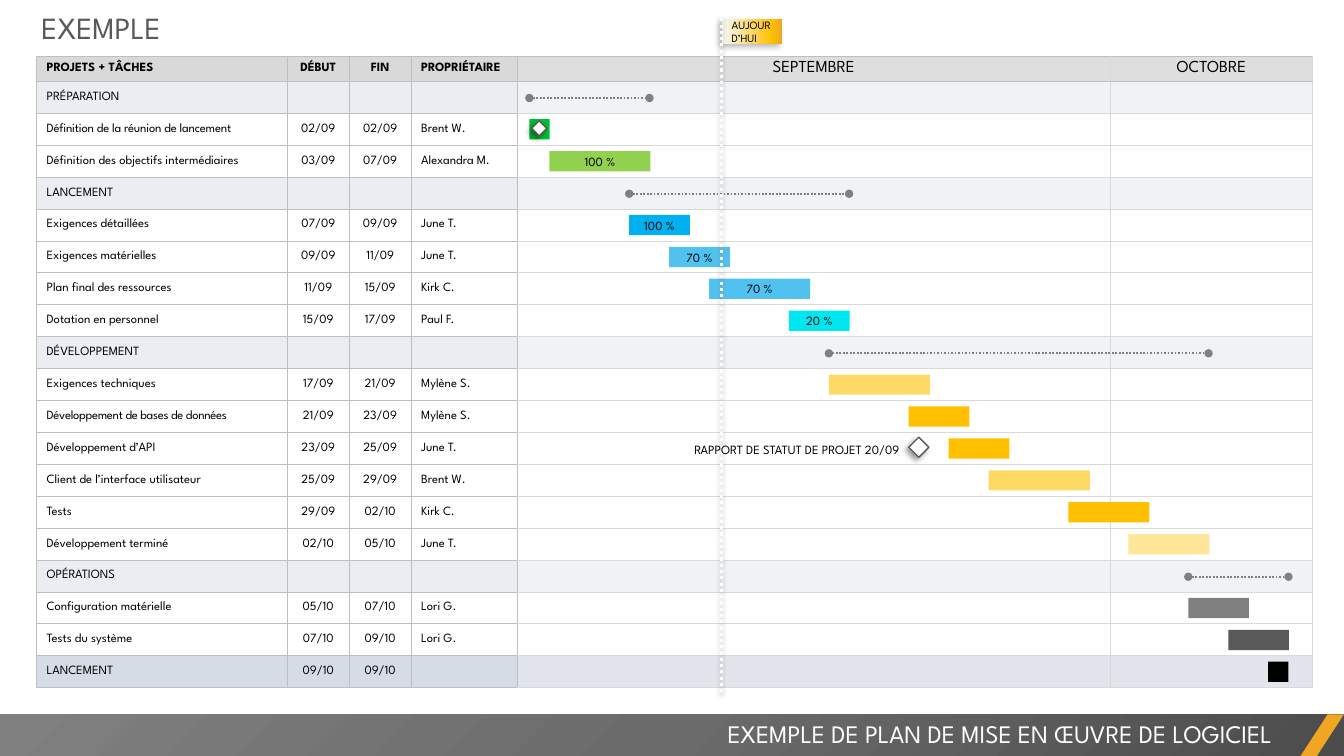
from lxml.etree import SubElement
from pptx import Presentation
from pptx.dml.color import RGBColor
from pptx.enum.dml import MSO_LINE
from pptx.enum.shapes import MSO_CONNECTOR, MSO_SHAPE
from pptx.enum.text import MSO_ANCHOR, PP_ALIGN
from pptx.oxml.ns import qn
from pptx.util import Cm, Pt

FONT = "League Spartan"
TABLE_LEFT, TABLE_TOP = 0.92, 1.42
COLUMNS = [6.32, 1.56, 1.56, 2.67, 14.95, 5.1]
HEADER_HEIGHT = 0.63
ROW_HEIGHT = 15.28 / 19
FIRST_DAY_LEFT = 13.34
DAY_STEP = 18.62 / 37
DAY_WIDTH = 0.51
TODAY = 18.19

HEADINGS = ["PROJETS + TÂCHES", "DÉBUT", "FIN", "PROPRIÉTAIRE", "SEPTEMBRE", "OCTOBRE"]
PHASES = [
    ("PRÉPARATION", "02/09", "07/09", [
        ("Définition de la réunion de lancement", "02/09", "02/09", "Brent W.", "00BD32", ""),
        ("Définition des objectifs intermédiaires", "03/09", "07/09", "Alexandra M.", "92D050", "100 %"),
    ]),
    ("LANCEMENT", "07/09", "17/09", [
        ("Exigences détaillées", "07/09", "09/09", "June T.", "00B0F0", "100 %"),
        ("Exigences matérielles", "09/09", "11/09", "June T.", "51C2F0", "70 %"),
        ("Plan final des ressources", "11/09", "15/09", "Kirk C.", "51C2F0", "70 %"),
        ("Dotation en personnel", "15/09", "17/09", "Paul F.", "00E7F2", "20 %"),
    ]),
    ("DÉVELOPPEMENT", "17/09", "05/10", [
        ("Exigences techniques", "17/09", "21/09", "Mylène S.", "FFD966", ""),
        ("Développement de bases de données", "21/09", "23/09", "Mylène S.", "FFC000", ""),
        ("Développement d’API", "23/09", "25/09", "June T.", "FFC000", ""),
        ("Client de l’interface utilisateur", "25/09", "29/09", "Brent W.", "FFD966", ""),
        ("Tests", "29/09", "02/10", "Kirk C.", "FFC000", ""),
        ("Développement terminé", "02/10", "05/10", "June T.", "FFE699", ""),
    ]),
    ("OPÉRATIONS", "05/10", "09/10", [
        ("Configuration matérielle", "05/10", "07/10", "Lori G.", "808080", ""),
        ("Tests du système", "07/10", "09/10", "Lori G.", "595959", ""),
        ("LANCEMENT", "09/10", "09/10", "", "000000", ""),
    ]),
]
LETTER_SPACING = {"Définition de la réunion de lancement": "-10",
                  "Développement de bases de données": "-20"}


def colour(code):
    return RGBColor.from_string(code)


def day_number(date):
    day, month = map(int, date.split("/"))
    return day + 30 * (month - 9)


def day_left(date):
    return FIRST_DAY_LEFT + DAY_STEP * (day_number(date) - 2)


def row_top(row):
    return TABLE_TOP + HEADER_HEIGHT + ROW_HEIGHT * (row - 1)


def write(frame, words, size=9, code="000000", align=PP_ALIGN.LEFT,
          anchor=MSO_ANCHOR.MIDDLE, bold=False):
    frame.word_wrap = True
    frame.vertical_anchor = anchor
    paragraph = frame.paragraphs[0]
    paragraph.alignment = align
    run = paragraph.add_run()
    run.text = words
    run.font.name = FONT
    run.font.size = Pt(size)
    run.font.bold = bold
    run.font.color.rgb = colour(code)
    return run


def add_shadow(properties, code, alpha, blur, distance):
    effects = properties.find(qn("a:effectLst"))
    shadow = SubElement(effects, qn("a:outerShdw"), blurRad=str(Pt(blur)),
                        dist=str(Pt(distance)), dir="8100000", rotWithShape="0")
    tint = SubElement(shadow, qn("a:srgbClr"), val=code)
    SubElement(tint, qn("a:alpha"), val=str(alpha * 1000))


def add_block(shapes, kind, left, top, width, height, fill=None):
    block = shapes.add_shape(kind, Cm(left), Cm(top), Cm(width), Cm(height))
    block.shadow.inherit = False
    block.line.fill.background()
    if fill:
        block.fill.solid()
        block.fill.fore_color.rgb = colour(fill)
    return block


def add_gradient(block, stops):
    properties = block.fill._xPr
    gradient = SubElement(properties, qn("a:gradFill"), rotWithShape="1")
    properties.find(qn("a:prstGeom")).addnext(gradient)
    stop_list = SubElement(gradient, qn("a:gsLst"))
    for position, code in stops:
        stop = SubElement(stop_list, qn("a:gs"), pos=str(position * 1000))
        SubElement(stop, qn("a:srgbClr"), val=code)
    return gradient


def add_dotted_line(shapes, start, end, code, width):
    line = shapes.add_connector(MSO_CONNECTOR.STRAIGHT, *map(Cm, start + end))
    line.line.color.rgb = colour(code)
    line.line.width = Pt(width)
    line.line.dash_style = MSO_LINE.ROUND_DOT
    SubElement(line._element.spPr, qn("a:effectLst"))
    return line


def add_label(shapes, left, top, width, height, words, **style):
    label = shapes.add_textbox(Cm(left), Cm(top), Cm(width), Cm(height))
    write(label.text_frame, words, align=PP_ALIGN.RIGHT, **style)


def add_milestone(shapes, left, top, size):
    diamond = add_block(shapes, MSO_SHAPE.DIAMOND, left, top, size, size, "FFFFFF")
    diamond.line.color.rgb = colour("595959")
    diamond.line.width = Pt(1)
    add_shadow(diamond._element.spPr, "000000", 40, 4, 3)


def format_cell(cell, fill, alpha, borders):
    cell.margin_top = cell.margin_bottom = 0
    cell.vertical_anchor = MSO_ANCHOR.MIDDLE
    properties = cell._tc.get_or_add_tcPr()
    for side, code in zip(("L", "R", "T", "B"), borders):
        border = SubElement(properties, qn("a:ln" + side), w=str(Pt(0.5)))
        SubElement(SubElement(border, qn("a:solidFill")), qn("a:srgbClr"), val=code)
    cell.fill.solid()
    cell.fill.fore_color.rgb = colour(fill)
    if alpha < 100:
        tint = properties.find(qn("a:solidFill")).find(qn("a:srgbClr"))
        SubElement(tint, qn("a:alpha"), val=str(alpha * 1000))


def fill_row(table, row, texts, fill, calendar_fill, alpha):
    header = row == 0
    for column, words in enumerate(texts):
        cell = table.cell(row, column)
        calendar = column >= 4
        dark, light = "BFBFBF", "D9D9D9"
        borders = [dark] * 4
        if calendar:
            borders = [dark if column == 4 else light, light,
                       dark if row < 2 else light, dark if header else light]
        format_cell(cell, calendar_fill if calendar else fill,
                    alpha if calendar else 100, borders)
        if not words:
            SubElement(cell.text_frame.paragraphs[0]._p, qn("a:endParaRPr"), sz="900")
            continue
        if calendar:
            cell.margin_left = cell.margin_right = 0
        run = write(cell.text_frame, words, 12 if calendar else 9,
                    align=PP_ALIGN.LEFT if column in (0, 3) else PP_ALIGN.CENTER,
                    bold=header and not calendar)
        if words in LETTER_SPACING:
            run.font._element.set("spc", LETTER_SPACING[words])


def add_schedule(shapes):
    row_count = 1 + sum(1 + len(tasks) for *_, tasks in PHASES)
    table = shapes.add_table(row_count, len(COLUMNS), Cm(TABLE_LEFT), Cm(TABLE_TOP),
                             Cm(sum(COLUMNS)), Cm(15.91)).table
    table.first_row = table.horz_banding = False
    for column, width in zip(table.columns, COLUMNS):
        column.width = Cm(width)
    for row in table.rows:
        row.height = Cm(ROW_HEIGHT)
    table.rows[0].height = Cm(HEADER_HEIGHT)
    fill_row(table, 0, HEADINGS, "D9D9D9", "BFBFBF", 50)
    row = 0
    for phase, start, end, tasks in PHASES:
        row += 1
        fill_row(table, row, [phase] + [""] * 5, "EAEEF3", "EAEEF3", 70)
        add_phase_span(shapes, row, start, end)
        for name, first, last, owner, bar_colour, progress in tasks:
            row += 1
            fill, alpha = ("FFFFFF", 50) if owner else ("D6DCE5", 70)
            fill_row(table, row, [name, first, last, owner, "", ""], fill, fill, alpha)
            days = day_number(last) - day_number(first) + 1
            bar = add_block(shapes, MSO_SHAPE.RECTANGLE, day_left(first),
                            row_top(row) + 0.15, days * DAY_WIDTH, 0.51, bar_colour)
            if progress:
                write(bar.text_frame, progress, align=PP_ALIGN.CENTER)


def add_phase_span(shapes, row, start, end):
    height = row_top(row) + 0.42
    span = add_dotted_line(shapes, (day_left(start), height),
                           (day_left(end) + DAY_WIDTH, height), "808080", 1.25)
    outline = span.line._get_or_add_ln()
    SubElement(outline, qn("a:headEnd"), type="oval")
    SubElement(outline, qn("a:tailEnd"), type="oval")


def add_today(shapes):
    flag = add_block(shapes, MSO_SHAPE.RECTANGLE, TODAY, 0.48, 1.52, 0.64)
    gradient = add_gradient(flag, [(0, "F7FAFD"), (83, "FFC000"), (100, "F0A622")])
    SubElement(gradient, qn("a:lin"), ang="0", scaled="0")
    add_shadow(flag._element.spPr, "000000", 25, 4, 3)
    write(flag.text_frame, "AUJOURD’HUI", 8)
    line = add_dotted_line(shapes, (TODAY, 0.46), (TODAY, 17.48), "FFFFFF", 2.25)
    add_shadow(line._element.spPr, "808080", 50, 3, 1)


def add_footer(shapes):
    band = add_block(shapes, MSO_SHAPE.RECTANGLE, 0, 18, 33.87, 1.06)
    gradient = add_gradient(band, [(0, "4C4C4C"), (50, "6B6B6B"), (100, "808080")])
    focus = SubElement(gradient, qn("a:path"), {"path": "circle"})
    SubElement(focus, qn("a:fillToRect"), l="100000", t="100000")
    accent = add_block(shapes, MSO_SHAPE.PARALLELOGRAM, 32.77, 18, 1.1, 1.06, "F0A622")
    accent.adjustments[0] = 0.65
    add_label(shapes, 13.34, 17.98, 18.97, 1.02,
              "EXEMPLE DE PLAN DE MISE EN ŒUVRE DE LOGICIEL",
              size=18, code="FFFFFF", anchor=MSO_ANCHOR.TOP)


def add_title(title):
    title.left, title.top, title.width, title.height = map(Cm, (0.79, 0.1, 16.81, 1.19))
    write(title.text_frame, "EXEMPLE", 22, "595959", anchor=MSO_ANCHOR.TOP)


def main():
    presentation = Presentation()
    presentation.slide_width, presentation.slide_height = Cm(33.87), Cm(19.05)
    shapes = presentation.slides.add_slide(presentation.slide_layouts[5]).shapes
    add_title(shapes.title)
    add_footer(shapes)
    add_schedule(shapes)
    add_milestone(shapes, day_left("02/09") + 0.06, row_top(2) + 0.19, 0.38)
    add_milestone(shapes, day_left("21/09"), row_top(12) + 0.12, 0.51)
    add_today(shapes.add_group_shape().shapes)
    add_label(shapes, 15.7, 10.95, 7.21, 0.76, "RAPPORT DE STATUT DE PROJET 20/09")
    presentation.save("out.pptx")


if __name__ == "__main__":
    main()
